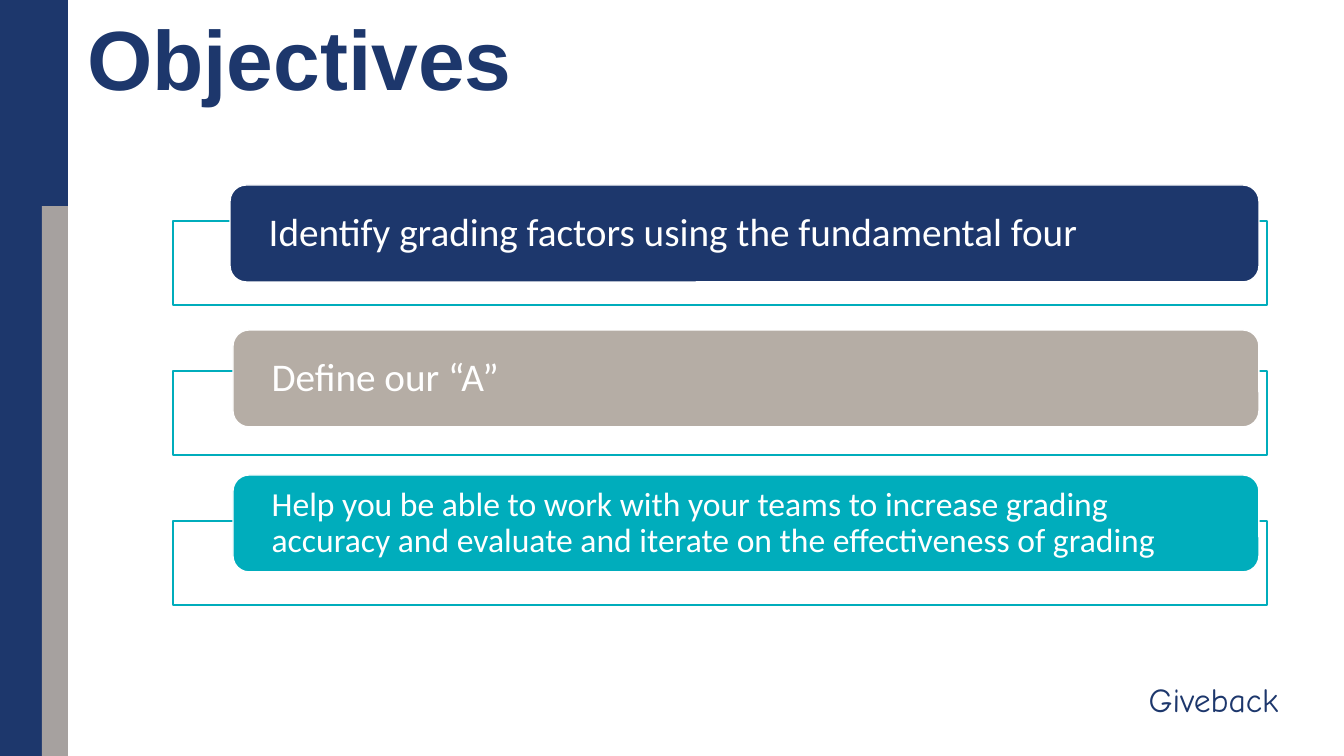
from pptx import Presentation
from pptx.dml.color import RGBColor
from pptx.enum.shapes import MSO_SHAPE
from pptx.enum.text import MSO_ANCHOR, PP_ALIGN
from pptx.oxml.ns import qn
from pptx.util import Pt
from lxml import etree

RECTANGLE, ROUNDED = MSO_SHAPE.RECTANGLE, MSO_SHAPE.ROUNDED_RECTANGLE
TOP, MIDDLE = MSO_ANCHOR.TOP, MSO_ANCHOR.MIDDLE
LEFT, CENTER = PP_ALIGN.LEFT, PP_ALIGN.CENTER

NAVY, TAUPE, TEAL, WHITE = "1D376C", "B5ADA5", "00ADBC", "FFFFFF"
TITLE = "Objectives"
BRAND = "Giveback"
# text, fill, font size, card left
OBJECTIVES = [
    ("Identify grading factors using the fundamental four", NAVY, 28, 230),
    ("Define our “A”", TAUPE, 28, 233),
    ("Help you be able to work with your teams to increase grading accuracy "
     "and evaluate and iterate on the effectiveness of grading", TEAL, 24, 233),
]
SLIDE_SIZE = (1344, 756)
TITLE_BOX = (77, 11, 1190, 102)
BRAND_BOX = (1103, 674, 221, 50)
NAVY_BAR = (0, 0, 68, 756)
TAUPE_BAR = (42, 206, 26, 550)
FRAME_LEFT, FRAME_TOP, FRAME_WIDTH, FRAME_HEIGHT, FRAME_STEP = 173, 221, 1094, 84, 150
CARD_TOP, CARD_RIGHT, CARD_HEIGHT, CARD_STEP = 185, 1259, 97, 145
CARD_INSET = 34


def px(length):
    return round(length * 914400 / 100.8)


def color(value):
    return RGBColor.from_string(value)


def add_box(slide, kind, box, fill, line=None):
    shape = slide.shapes.add_shape(kind, *map(px, box))
    shape.shadow.inherit = False
    shape.fill.solid()
    shape.fill.fore_color.rgb = color(fill)
    if line:
        shape.line.color.rgb = color(line)
        shape.line.width = Pt(1)
    else:
        shape.line.fill.background()
    return shape


def write(shape, text, font, frame, paragraph):
    """Fill a shape with one paragraph, formatted from three dicts."""
    text_frame = shape.text_frame
    text_frame.text = text
    first = text_frame.paragraphs[0]
    font_color = font["color"]
    first.runs[0].font.color.rgb = color(font_color)
    settings = {key: value for key, value in font.items() if key != "color"}
    for target, values in ((text_frame, frame), (first, paragraph),
                           (first.runs[0].font, settings)):
        for name, value in values.items():
            setattr(target, name, value)


def main():
    presentation = Presentation()
    presentation.slide_width, presentation.slide_height = map(px, SLIDE_SIZE)
    slide = presentation.slides.add_slide(presentation.slide_layouts[5])

    title = slide.shapes.title
    title.left, title.top, title.width, title.height = map(px, TITLE_BOX)
    write(title, TITLE,
          {"name": "Arial", "size": Pt(60), "bold": True, "color": NAVY},
          {"vertical_anchor": TOP, "word_wrap": True},
          {"alignment": LEFT, "line_spacing": Pt(65)})

    brand = slide.shapes.add_textbox(*map(px, BRAND_BOX))
    write(brand, BRAND, {"name": "Comic Neue", "size": Pt(24), "color": NAVY},
          {"word_wrap": True}, {"alignment": CENTER})

    add_box(slide, RECTANGLE, NAVY_BAR, NAVY)
    taupe_bar = add_box(slide, RECTANGLE, TAUPE_BAR, TAUPE)
    fill_color = taupe_bar.fill._xPr.find(qn("a:solidFill"))[0]
    etree.SubElement(fill_color, qn("a:alpha"), val="90000")

    for index, (text, fill, size, left) in enumerate(OBJECTIVES):
        add_box(slide, RECTANGLE,
                (FRAME_LEFT, FRAME_TOP + index * FRAME_STEP, FRAME_WIDTH, FRAME_HEIGHT),
                WHITE, TEAL)
        card = add_box(slide, ROUNDED,
                       (left, CARD_TOP + index * CARD_STEP, CARD_RIGHT - left, CARD_HEIGHT),
                       fill, WHITE)
        write(card, text, {"name": "Calibri", "size": Pt(size), "color": WHITE},
              {"vertical_anchor": MIDDLE, "word_wrap": True,
               "margin_left": px(CARD_INSET), "margin_right": px(CARD_INSET),
               "margin_top": 0, "margin_bottom": 0},
              {"alignment": LEFT, "line_spacing": 0.9})

    presentation.save("out.pptx")


if __name__ == "__main__":
    main()
